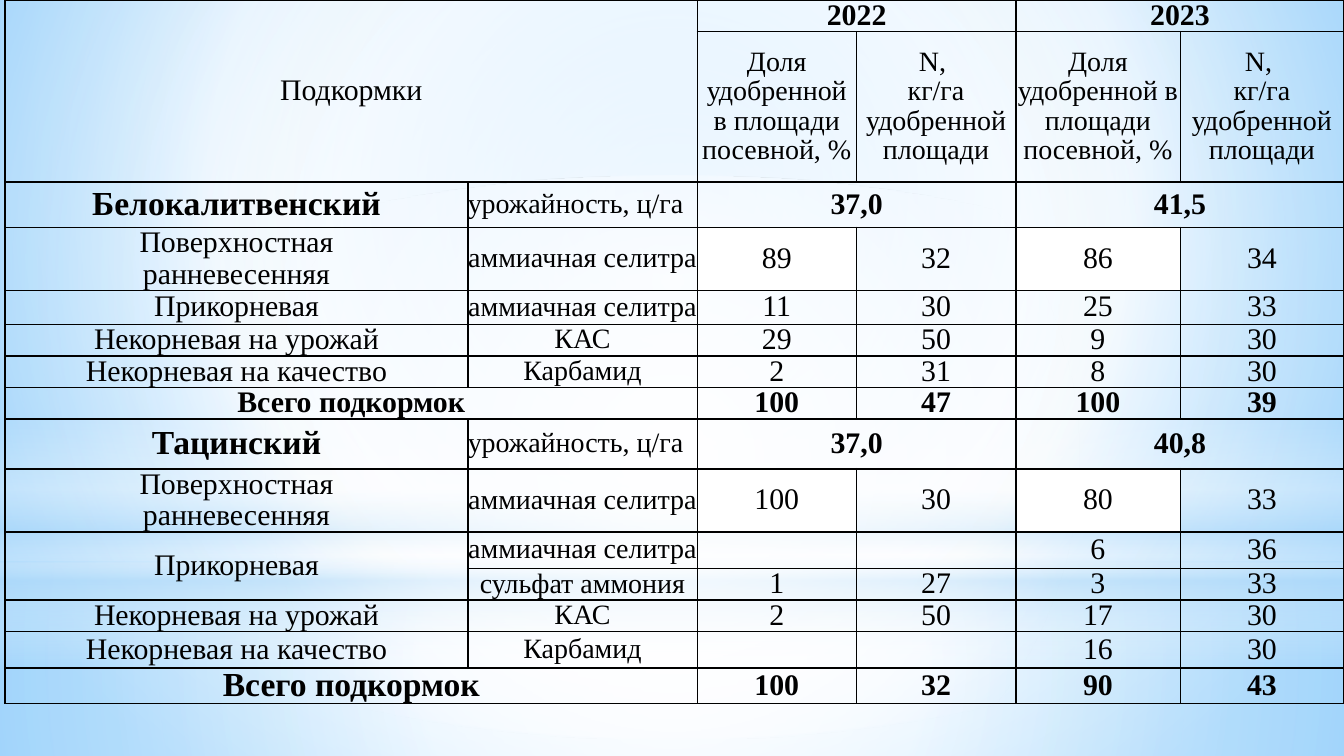
from lxml import etree
from pptx import Presentation
from pptx.dml.color import RGBColor
from pptx.enum.shapes import MSO_SHAPE
from pptx.enum.text import MSO_ANCHOR, PP_ALIGN
from pptx.oxml import parse_xml
from pptx.oxml.ns import nsdecls, qn
from pptx.util import Cm, Pt

RECT, OVAL = MSO_SHAPE.RECTANGLE, MSO_SHAPE.OVAL
LEFT, CENTER = PP_ALIGN.LEFT, PP_ALIGN.CENTER
MIDDLE = MSO_ANCHOR.MIDDLE

THEME = {
    "font": "Times New Roman",
    "ink": "000000", "white": "FFFFFF", "mist": "B4DCFA",
    "sky": "9ED5FF", "deep": "5BB9FF",
    "small": 15, "body": 16, "large": 18,
    "thick": 1, "thin": 0.5,
}
WHITE, MIST = THEME["white"], THEME["mist"]
INK = RGBColor.from_string(THEME["ink"])


def paint(fill, stops, shade):
    fill.solid()
    solid = fill._xPr.find(qn("a:solidFill"))
    marks = "".join(
        f'<a:gs pos="{pos * 1000}"><a:srgbClr val="{hue}">'
        f'<a:alpha val="{alpha * 1000}"/></a:srgbClr></a:gs>'
        for pos, hue, alpha in stops)
    grad = parse_xml(f'<a:gradFill {nsdecls("a")} rotWithShape="1">'
                     f'<a:gsLst>{marks}</a:gsLst>{shade}</a:gradFill>')
    solid.getparent().replace(solid, grad)


def circle(left, top, right, bottom):
    return (f'<a:path path="circle"><a:fillToRect l="{left}000" t="{top}000" '
            f'r="{right}000" b="{bottom}000"/></a:path>')


deck = Presentation()
deck.slide_width, deck.slide_height = Cm(25.4), Cm(14.29)
slide = deck.slides.add_slide(deck.slide_layouts[6])
paint(slide.background.fill,
      [(0, THEME["sky"], 100), (60, WHITE, 100), (100, THEME["deep"], 100)],
      circle(20, 10, 20, 60))

mid = circle(50, 50, 50, 50)
down = '<a:lin ang="5400000" scaled="0"/>'
glows = [
    (RECT, 10.64, 3.65, [(0, WHITE, 91), (37, WHITE, 76), (100, MIST, 79)], mid),
    (RECT, 0, 10.64, [(0, WHITE, 89), (48, WHITE, 62), (100, MIST, 79)], mid),
    (RECT, 7.85, 4.78, [(0, WHITE, 0), (29, WHITE, 30), (45, MIST, 40),
                        (55, WHITE, 26), (65, MIST, 60), (100, WHITE, 0)], down),
    (OVAL, 3.33, 10.64, [(0, WHITE, 100), (56, WHITE, 0)], mid),
]
for kind, top, high, stops, shade in glows:
    glow = slide.shapes.add_shape(kind, 0, Cm(top), deck.slide_width, Cm(high))
    glow.shadow.inherit = False
    glow.line.fill.background()
    paint(glow.fill, stops, shade)

share = "Доля удобренной в площади посевной, %"
dose = "N, \nкг/га удобренной площади"
crop = "урожайность, ц/га"
early = "Поверхностная\nранневесенняя"
root, leaf, grain = "Прикорневая", "Некорневая на урожай", "Некорневая на качество"
nitre, urea, total = "аммиачная селитра", "Карбамид", "Всего подкормок"
rows = [
    (0.58, "Подкормки", "", "2022", "", "2023", ""),
    (2.84, "", "", share, dose, share, dose),
    (0.86, "Белокалитвенский", crop, "37,0", "", "41,5", ""),
    (1.14, early, nitre, "89", "32", "86", "34"),
    (0.64, root, nitre, "11", "30", "25", "33"),
    (0.58, leaf, "КАС", "29", "50", "9", "30"),
    (0.58, grain, urea, "2", "31", "8", "30"),
    (0.58, total, "", "100", "47", "100", "39"),
    (0.94, "Тацинский", crop, "37,0", "", "40,8", ""),
    (1.14, early, nitre, "100", "30", "80", "33"),
    (0.64, root, nitre, "", "", "6", "36"),
    (0.58, "", "сульфат аммония", "1", "27", "3", "33"),
    (0.58, leaf, "КАС", "2", "50", "17", "30"),
    (0.58, grain, urea, "", "", "16", "30"),
    (0.58, total, "", "100", "32", "90", "43"),
]
widths = [8.74, 4.34, 3, 3.02, 3.1, 3.1]
frame = slide.shapes.add_table(len(rows), len(widths), Cm(0.1), 0,
                               Cm(sum(widths)), Cm(13.92))
table = frame.table
table.first_row = table.horz_banding = False
for col, width in zip(table.columns, widths):
    col.width = Cm(width)

spans = [(0, 0, 1, 1), (7, 0, 7, 1), (14, 0, 14, 1), (10, 0, 11, 0)]
spans += [(r, c, r, c + 1) for r in (0, 2, 8) for c in (2, 4)]
for top, left, low, right in spans:
    table.cell(top, left).merge(table.cell(low, right))

inset = {"margin_left": 0, "margin_right": 0, "margin_top": 0,
         "margin_bottom": 0, "vertical_anchor": MIDDLE}
for r, (high, *words) in enumerate(rows):
    table.rows[r].height = Cm(high)
    for c, word in enumerate(words):
        cell = table.cell(r, c)
        for name, value in inset.items():
            setattr(cell, name, value)

        fine = {
            "L": c in (3, 5),
            "R": c in (2, 4) and not cell.is_merge_origin,
            "T": r == 11 and c > 0,
            "B": r == 10 and c > 0,
        }
        props = cell._tc.get_or_add_tcPr()
        for side, slim in fine.items():
            weight = Pt(THEME["thin" if slim else "thick"])
            props.append(parse_xml(
                f'<a:ln{side} {nsdecls("a")} w="{weight}"><a:solidFill>'
                f'<a:srgbClr val="{THEME["ink"]}"/></a:solidFill></a:ln{side}>'))
        if r in (3, 9) and c in (2, 4):
            cell.fill.solid()
            cell.fill.fore_color.rgb = RGBColor.from_string(WHITE)
        else:
            cell.fill.background()

        size = THEME["body"]
        if c == 1 or r == 1:
            size = THEME["small"]
        elif c == 0 and r in (2, 8, 14):
            size = THEME["large"]
        style = {
            "name": THEME["font"], "size": Pt(size),
            "bold": r in (7, 14) or r in (2, 8) and c != 1 or r == 0 and c > 1,
        }
        par = cell.text_frame.paragraphs[0]
        par.alignment = LEFT if word == crop else CENTER
        par.line_spacing = 0.95
        if not word:
            etree.SubElement(par._p, qn("a:endParaRPr"), sz=str(size * 100))
            continue
        par.text = word
        for gap in par._p.findall(qn("a:br")):
            etree.SubElement(gap, qn("a:rPr"), sz=str(size * 100))
        for run in par.runs:
            for name, value in style.items():
                setattr(run.font, name, value)
            run.font.color.rgb = INK

deck.save("out.pptx")
